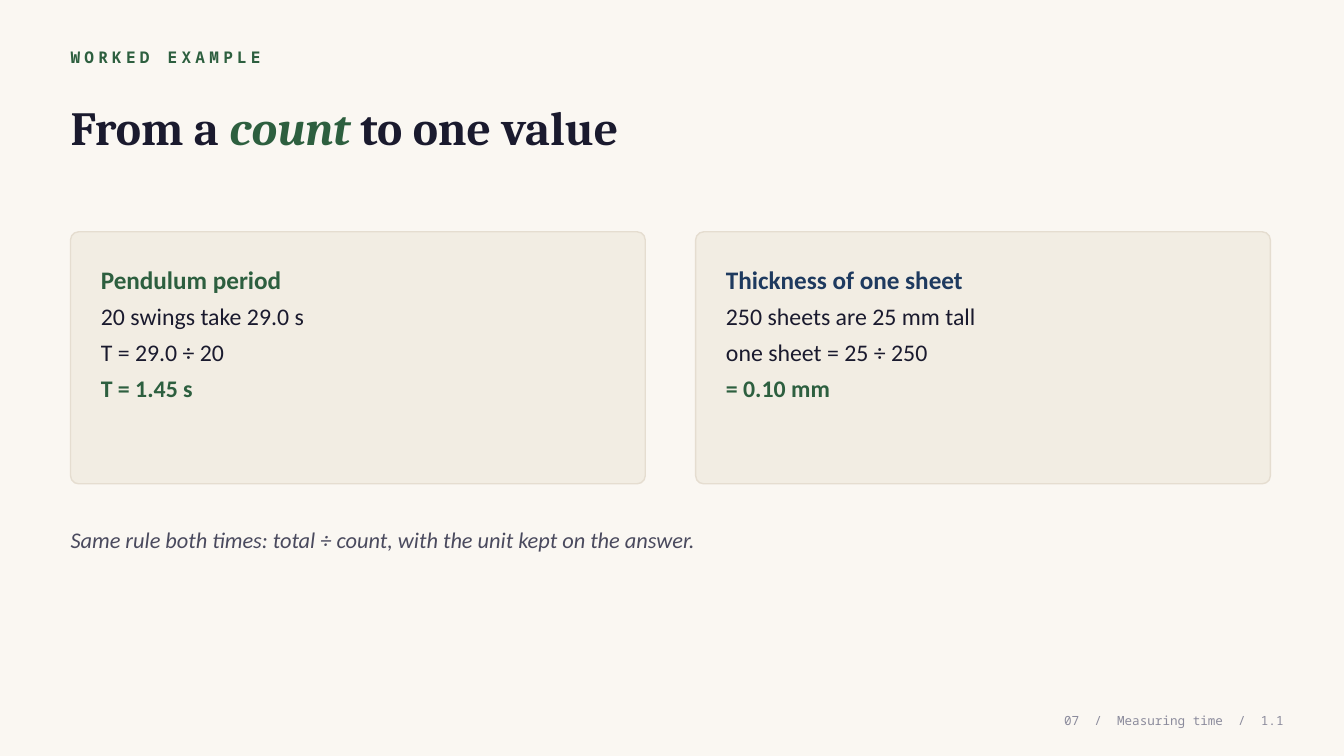
from dataclasses import dataclass

from lxml import etree
from pptx import Presentation
from pptx import util as u
from pptx.dml.color import RGBColor
from pptx.enum import shapes, text
from pptx.oxml.ns import qn

# Content: a run is (words, colour, size, bold, italic)
EYEBROW = "WORKED EXAMPLE"
TITLE = [("From a ", "ink", False), ("count", "green", True), (" to one value", "ink", False)]
CARDS = [
    ("Pendulum period", "green",
     ["20 swings take 29.0 s", "T = 29.0 ÷ 20"], "T = 1.45 s"),
    ("Thickness of one sheet", "navy",
     ["250 sheets are 25 mm tall", "one sheet = 25 ÷ 250"], "= 0.10 mm"),
]
RULE = "Same rule both times: total ÷ count, with the unit kept on the answer."
FOOTER = "07  /  Measuring time  /  1.1"


@dataclass(frozen=True)
class Theme:
    paper: str = "FAF7F2"
    card: str = "F2EDE3"
    edge: str = "E5DDD0"
    ink: str = "1A1A2E"
    green: str = "2D5F3F"
    navy: str = "1E3A5F"
    muted: str = "4A4A5E"
    faint: str = "8B8B9C"
    serif: str = "Cambria"
    sans: str = "Calibri"
    mono: str = "Noto Sans Mono"
    title: float = 34
    heading: float = 18
    body: float = 17
    note: float = 16
    eyebrow: float = 11.5
    footer: float = 9


T = Theme()

# Layout in px, 100 to the inch
PX = 9144
WIDTH, HEIGHT = 1333, 750
LEFT, FULL_W = 70, 1193
CARD_W, CARD_H, CARD_TOP, CARD_GAP = 570, 250, 230, 50
PAD_X, PAD_TOP, TEXT_H = 30, 25, 210
RADIUS = 8


def px(*lengths):
    return [u.Emu(n * PX) for n in lengths]


def rgb(name):
    return RGBColor.from_string(getattr(T, name))


def place(sp, box, anchor):
    sp.left, sp.top, sp.width, sp.height = px(*box)
    tf = sp.text_frame
    tf.margin_left = tf.margin_top = tf.margin_right = tf.margin_bottom = 0
    tf.word_wrap = True
    tf.auto_size = text.MSO_AUTO_SIZE.NONE
    tf.vertical_anchor = anchor
    return tf


def style(r, font, size, colour, bold=False, italic=False):
    r.font.name, r.font.size = font, u.Pt(size)
    r.font.bold, r.font.italic = bold, italic
    r.font.color.rgb = rgb(colour)


def label(s, words, box, font, size, colour, bold=False, italic=False):
    sp = s.shapes.add_textbox(*px(*box))
    tf = place(sp, box, text.MSO_ANCHOR.MIDDLE)
    tf.text = words
    p = tf.paragraphs[0]
    style(p.runs[0], font, size, colour, bold, italic)
    return p


def add_title(s):
    tf = place(s.shapes.title, (LEFT, 78, FULL_W, 95), text.MSO_ANCHOR.MIDDLE)
    p = tf.paragraphs[0]
    p.alignment = text.PP_ALIGN.LEFT
    for words, colour, italic in TITLE:
        r = p.add_run()
        r.text = words
        style(r, T.serif, T.title, colour, True, italic)


def add_card(s, body, left, card):
    heading, accent, steps, answer = card

    # Panel, kept behind the text
    panel = s.shapes.add_shape(shapes.MSO_SHAPE.ROUNDED_RECTANGLE,
                               *px(left, CARD_TOP, CARD_W, CARD_H))
    panel.adjustments[0] = RADIUS / CARD_H
    panel.shadow.inherit = False
    panel.fill.solid()
    panel.fill.fore_color.rgb = rgb("card")
    panel.line.color.rgb = rgb("edge")
    panel.line.width = u.Pt(1)
    s.shapes._spTree.insert(2, panel._element)

    # Heading, working and answer
    box = (left + PAD_X, CARD_TOP + PAD_TOP, CARD_W - 2 * PAD_X, TEXT_H)
    tf = place(body, box, text.MSO_ANCHOR.TOP)
    tf.text = "\n".join([heading, *steps, answer])
    looks = [(T.heading, accent, True), *[(T.body, "ink", False)] * len(steps),
             (T.body, "green", True)]
    for p, look in zip(tf.paragraphs, looks):
        pPr = p._p.get_or_add_pPr()
        pPr.set("marL", "0")
        pPr.set("indent", "0")
        etree.SubElement(pPr, qn("a:buNone"))
        p.line_spacing = 1.25
        p.space_before = u.Pt(0)
        style(p.runs[0], T.sans, *look)


def main():
    prs = Presentation()
    prs.slide_width, prs.slide_height = px(WIDTH, HEIGHT)
    s = prs.slides.add_slide(prs.slide_layouts.get_by_name("Two Content"))
    s.background.fill.solid()
    s.background.fill.fore_color.rgb = rgb("paper")

    # Heading area
    p = label(s, EYEBROW, (LEFT, 42, FULL_W, 30), T.mono, T.eyebrow, "green", bold=True)
    p.runs[0].font._element.set("spc", "300")
    add_title(s)

    # Two worked cards
    for i, card in enumerate(CARDS):
        add_card(s, s.placeholders[i + 1], LEFT + i * (CARD_W + CARD_GAP), card)

    # Closing rule and footer
    label(s, RULE, (LEFT, 510, FULL_W, 50), T.sans, T.note, "muted", italic=True)
    p = label(s, FOOTER, (933, 700, 340, 30), T.mono, T.footer, "faint")
    p.alignment = text.PP_ALIGN.RIGHT

    prs.save("out.pptx")


if __name__ == "__main__":
    main()
